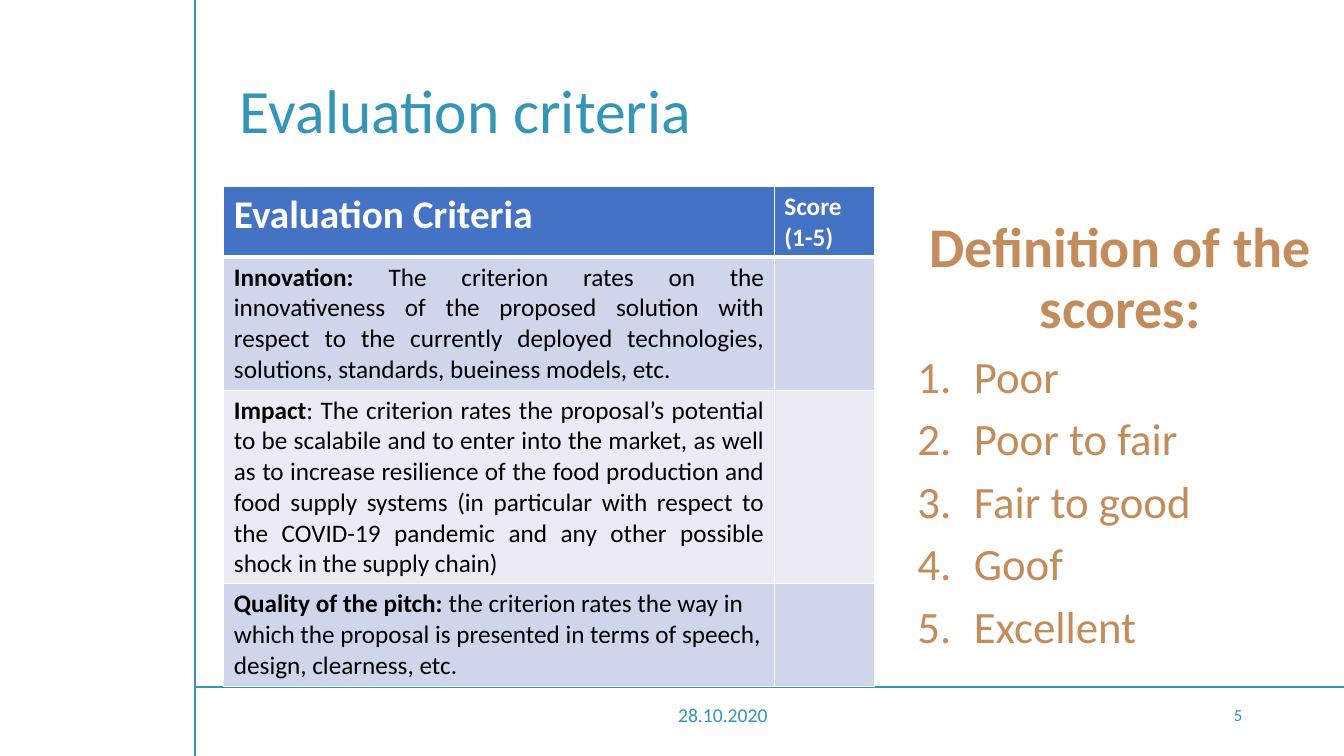
from lxml import etree
from pptx import Presentation
from pptx.dml.color import RGBColor
from pptx.enum import shapes, text
from pptx.oxml.ns import qn
from pptx.util import Inches, Pt

FONT = "Calibri"
COLORS = {
    "teal": "3395B7", "sand": "C58C5B", "white": "FFFFFF", "black": "000000",
    "header": "4472C4", "band_dark": "CFD5EA", "band_light": "E9EBF5",
}
TITLE = "Evaluation criteria"
HEADERS = [("Evaluation Criteria", 28), ("Score (1-5)", 18)]
JUSTIFY, LEFT = text.PP_ALIGN.JUSTIFY, text.PP_ALIGN.LEFT
CRITERIA = [  # name, description, alignment, row height
    ("Innovation: ",
     "The criterion rates on the innovativeness of the proposed solution with respect to "
     "the currently deployed technologies, solutions, standards, bueiness models, etc.",
     JUSTIFY, 1.32),
    ("Impact",
     ": The criterion rates the proposal’s potential to be scalabile and to enter into the "
     "market, as well as to increase resilience of the food production and food supply "
     "systems (in particular with respect to the COVID-19 pandemic and any other possible "
     "shock in the supply chain)",
     JUSTIFY, 1.92),
    ("Quality of the pitch: ",
     "the criterion rates the way in which the proposal is presented in terms of speech, "
     "design, clearness, etc.",
     LEFT, 1.02),
]
HEADER_HEIGHT = 0.7
COLUMN_WIDTHS = [5.46, 0.99]
SCORES_HEADING = "Definition of the scores:"
SCORES = ["Poor", "Poor to fair", "Fair to good", "Goof", "Excellent"]
FOOTERS = [  # text, left, alignment, size
    ("28.10.2020", 5.67, text.PP_ALIGN.CENTER, 14),
    ("5", 9.42, text.PP_ALIGN.RIGHT, 12),
]
RULES = [(1.93, 0, 1.93, 7.5), (13.33, 6.82, 1.93, 6.82)]


def rgb(name):
    return RGBColor.from_string(COLORS[name])


def add_run(p, content, size, color, bold=False):
    r = p.add_run()
    r.text = content
    r.font.name, r.font.size, r.font.bold = FONT, Pt(size), bold
    r.font.color.rgb = rgb(color)


def add_rule(slide, ends):
    line = slide.shapes.add_connector(
        shapes.MSO_CONNECTOR.STRAIGHT, *[Inches(v) for v in ends])
    line.line.color.rgb = rgb("teal")
    line.line.width = Pt(1.5)
    etree.SubElement(line._element.spPr, qn("a:effectLst"))


def add_text_box(slide, *box):
    tf = slide.shapes.add_textbox(*[Inches(v) for v in box]).text_frame
    tf.word_wrap = True
    return tf


def style_cell(cell, fill, bottom=1):
    """Fill the cell and give it white borders, the bottom one in its own width."""
    cell.fill.solid()
    cell.fill.fore_color.rgb = rgb(fill)
    tc_pr = cell._tc.get_or_add_tcPr()
    for i, (side, width) in enumerate(zip("LRTB", (1, 1, 1, bottom))):
        ln = etree.Element(qn(f"a:ln{side}"), w=str(Pt(width)))
        solid = etree.SubElement(ln, qn("a:solidFill"))
        etree.SubElement(solid, qn("a:srgbClr"), val=COLORS["white"])
        tc_pr.insert(i, ln)


def add_criteria_table(slide):
    heights = [HEADER_HEIGHT] + [c[3] for c in CRITERIA]
    table = slide.shapes.add_table(
        len(heights), len(COLUMN_WIDTHS), Inches(2.22), Inches(1.85),
        Inches(sum(COLUMN_WIDTHS)), Inches(sum(heights))).table
    for column, width in zip(table.columns, COLUMN_WIDTHS):
        column.width = Inches(width)
    for row, height in zip(table.rows, heights):
        row.height = Inches(height)

    for col, (header, size) in enumerate(HEADERS):
        cell = table.cell(0, col)
        style_cell(cell, "header", bottom=3)
        add_run(cell.text_frame.paragraphs[0], header, size, "white", True)
    for row, (name, description, align, _) in enumerate(CRITERIA, 1):
        for col in range(len(COLUMN_WIDTHS)):
            style_cell(table.cell(row, col), "band_dark" if row % 2 else "band_light")
        p = table.cell(row, 0).text_frame.paragraphs[0]
        p.alignment = align
        add_run(p, name, 18, "black", True)
        add_run(p, description, 18, "black")


def add_scores(slide):
    tf = add_text_box(slide, 9, 2.13, 4.22, 4.76)
    p = tf.paragraphs[0]
    p.alignment = text.PP_ALIGN.CENTER
    p.line_spacing = 0.9
    add_run(p, SCORES_HEADING, 40, "sand", True)
    for score in SCORES:
        p = tf.add_paragraph()
        p.line_spacing = 0.9
        p.space_before = Pt(10)
        p_pr = p._p.get_or_add_pPr()
        p_pr.set("marL", str(Inches(0.56)))
        p_pr.set("indent", str(-Inches(0.56)))
        etree.SubElement(p_pr, qn("a:buFont"), typeface="+mj-lt")
        etree.SubElement(p_pr, qn("a:buAutoNum"), type="arabicPeriod")
        add_run(p, score, 32, "sand")


def main():
    prs = Presentation()
    prs.slide_width, prs.slide_height = Inches(13.33), Inches(7.5)
    slide = prs.slides.add_slide(prs.slide_layouts[5])

    for ends in RULES:
        add_rule(slide, ends)

    title = slide.shapes.title
    title.left, title.top = Inches(2.28), Inches(0.4)
    title.width, title.height = Inches(10.13), Inches(1.45)
    title.text_frame.vertical_anchor = text.MSO_ANCHOR.MIDDLE
    p = title.text_frame.paragraphs[0]
    p.alignment = LEFT
    p.line_spacing = 0.9
    add_run(p, TITLE, 44, "teal")

    for label, left, align, size in FOOTERS:
        tf = add_text_box(slide, left, 6.89, 3, 0.4)
        tf.vertical_anchor = text.MSO_ANCHOR.MIDDLE
        tf.paragraphs[0].alignment = align
        add_run(tf.paragraphs[0], label, size, "teal")

    add_criteria_table(slide)
    add_scores(slide)
    prs.save("out.pptx")


if __name__ == "__main__":
    main()
